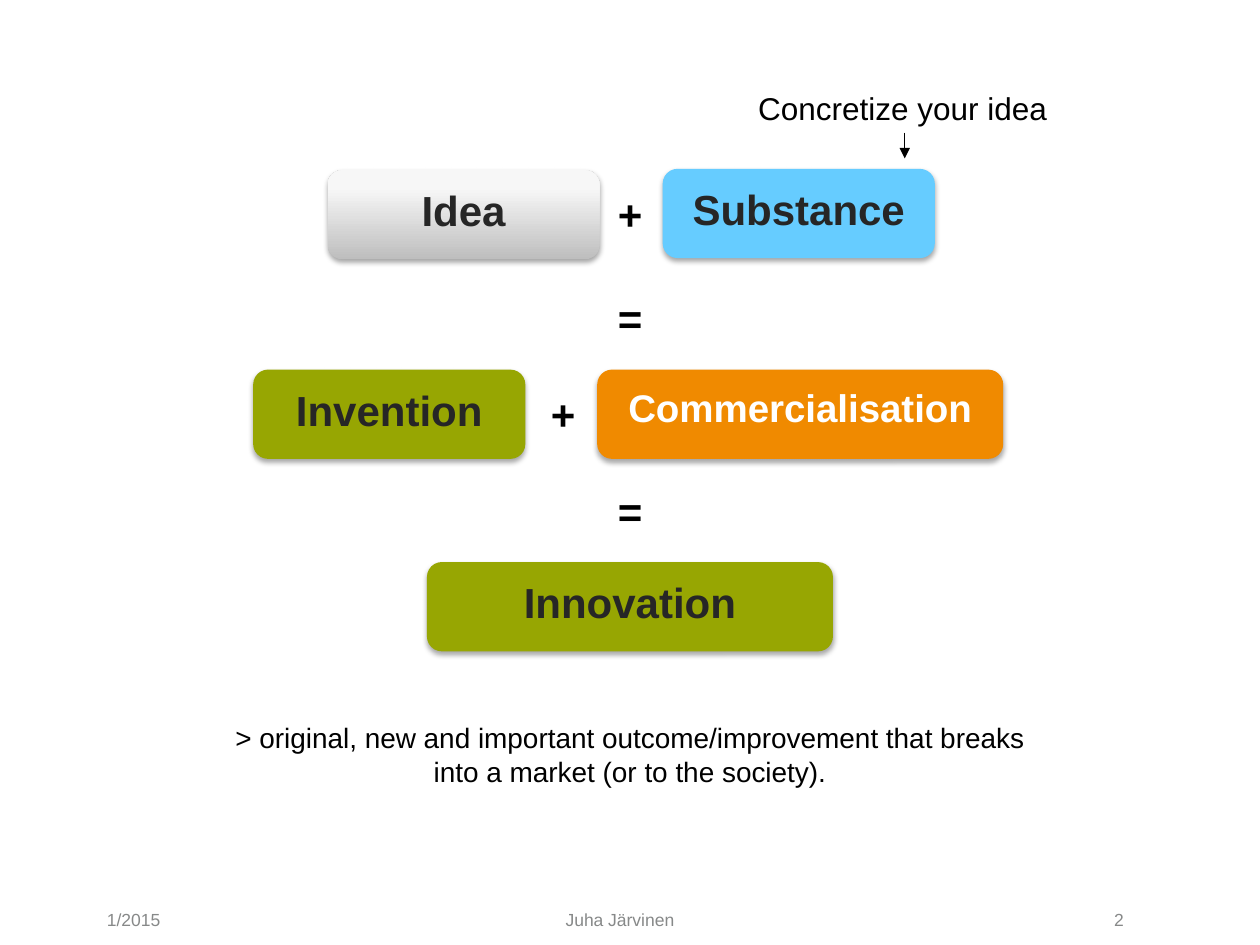
from lxml.etree import SubElement
from pptx import Presentation
from pptx.dml.color import RGBColor
from pptx.enum.shapes import MSO_CONNECTOR, MSO_SHAPE
from pptx.enum.text import MSO_ANCHOR, PP_ALIGN
from pptx.oxml.ns import qn
from pptx.util import Pt

THEME = {
    "font": "Arial",
    "black": "000000", "dark": "262626", "white": "FFFFFF", "gray": "878989",
    "green": "97A602", "orange": "F08A00", "blue": "66CCFF",
    "silver": ("BEBEBE", "F7F7F7"),
    "term": 24, "long_term": 22, "callout": 18, "note": 16, "footer": 10,
}
SLIDE_W, SLIDE_H = 720, 540
MID = SLIDE_W / 2
BOX_H, NARROW, WIDE = 51, 155.5, 232
OP_W, OP_H = 39.6, 36.5

# text, left, top, width, fill, text colour, text size
TERMS = [
    ("Idea", 187.2, 97.2, NARROW, "silver", "dark", "term"),
    ("Substance", 378.7, 96.5, NARROW, "blue", "dark", "term"),
    ("Invention", 144.7, 211.2, NARROW, "green", "dark", "term"),
    ("Commercialisation", 341.3, 211.2, WIDE, "orange", "white", "long_term"),
    ("Innovation", MID - WIDE / 2, 321.2, WIDE, "green", "dark", "term"),
]
# sign, centre x, centre y
OPERATORS = [("+", MID, 122.4), ("=", MID, 181.6),
             ("+", 321.8, 237), ("=", MID, 291.9)]
NOTE = ["> original, new and important outcome/improvement that breaks",
        "into a market (or to the society)."]
CALLOUT = "Concretize your idea"
ARROW_X, ARROW_TOP, ARROW_BOTTOM = 517, 75.8, 90.5
# text, left, width, alignment
FOOTERS = [
    ("1/2015", 54, 120, PP_ALIGN.LEFT),
    ("Juha Järvinen", 180, 348.5, PP_ALIGN.CENTER),
    ("2", 534, 115.2, PP_ALIGN.RIGHT),
]


def rgb(name):
    return RGBColor.from_string(THEME.get(name, name))


def write(tf, lines, size, color="black", align=PP_ALIGN.CENTER, bold=False):
    for i, line in enumerate(lines):
        p = tf.paragraphs[0] if i == 0 else tf.add_paragraph()
        p.text = line
        p.alignment = align
        p.font.name = THEME["font"]
        p.font.size = Pt(THEME[size])
        p.font.color.rgb = rgb(color)
        p.font.bold = bold


def add_text(s, lines, left, top, width, height, size, wrap=True, **style):
    tf = s.shapes.add_textbox(Pt(left), Pt(top), Pt(width), Pt(height)).text_frame
    tf.word_wrap = wrap
    write(tf, lines, size, **style)


def add_shadow(sp):
    """Replace the theme shadow by a soft one just below the shape."""
    sp.shadow.inherit = False
    effects = sp._element.spPr.find(qn("a:effectLst"))
    shadow = SubElement(effects, qn("a:outerShdw"), blurRad=str(Pt(3.1)),
                        dist=str(Pt(1.8)), dir="5400000", rotWithShape="0")
    color = SubElement(shadow, qn("a:srgbClr"), val=THEME["black"])
    SubElement(color, qn("a:alpha"), val="35000")


def add_term(s, text, left, top, width, fill, color, size):
    sp = s.shapes.add_shape(MSO_SHAPE.ROUNDED_RECTANGLE,
                            Pt(left), Pt(top), Pt(width), Pt(BOX_H))
    if fill == "silver":
        sp.fill.gradient()
        sp.fill.gradient_angle = 90
        for stop, shade, position in zip(sp.fill.gradient_stops,
                                         THEME[fill], (0, 0.8)):
            stop.color.rgb = rgb(shade)
            stop.position = position
    else:
        sp.fill.solid()
        sp.fill.fore_color.rgb = rgb(fill)
    sp.line.fill.background()
    add_shadow(sp)
    tf = sp.text_frame
    tf.word_wrap = True
    tf.vertical_anchor = MSO_ANCHOR.TOP
    tf.margin_top = Pt(6)
    write(tf, [text], size, color, bold=True)


def add_arrow(s, x, top, bottom):
    arrow = s.shapes.add_connector(MSO_CONNECTOR.STRAIGHT,
                                   Pt(x), Pt(top), Pt(x), Pt(bottom))
    arrow.line.color.rgb = rgb("black")
    arrow.line.width = Pt(0.75)
    SubElement(arrow.line._get_or_add_ln(), qn("a:tailEnd"), type="triangle")
    SubElement(arrow._element.spPr, qn("a:effectLst"))


def main():
    prs = Presentation()
    prs.slide_width, prs.slide_height = Pt(SLIDE_W), Pt(SLIDE_H)
    s = prs.slides.add_slide(prs.slide_layouts[6])
    for text, left, width, align in FOOTERS:
        add_text(s, [text], left, 516, width, 24, "footer",
                 color="gray", align=align)
    for term in TERMS:
        add_term(s, *term)
    for sign, x, y in OPERATORS:
        add_text(s, [sign], x - OP_W / 2, y - OP_H / 2, OP_W, OP_H,
                 "term", bold=True)
    add_text(s, NOTE, 126.7, 408.2, 466.6, 46, "note", wrap=False)
    add_text(s, [CALLOUT], 426.2, 47.5, 181.4, 29, "callout", wrap=False,
             align=PP_ALIGN.LEFT)
    add_arrow(s, ARROW_X, ARROW_TOP, ARROW_BOTTOM)
    prs.save("out.pptx")


if __name__ == "__main__":
    main()
